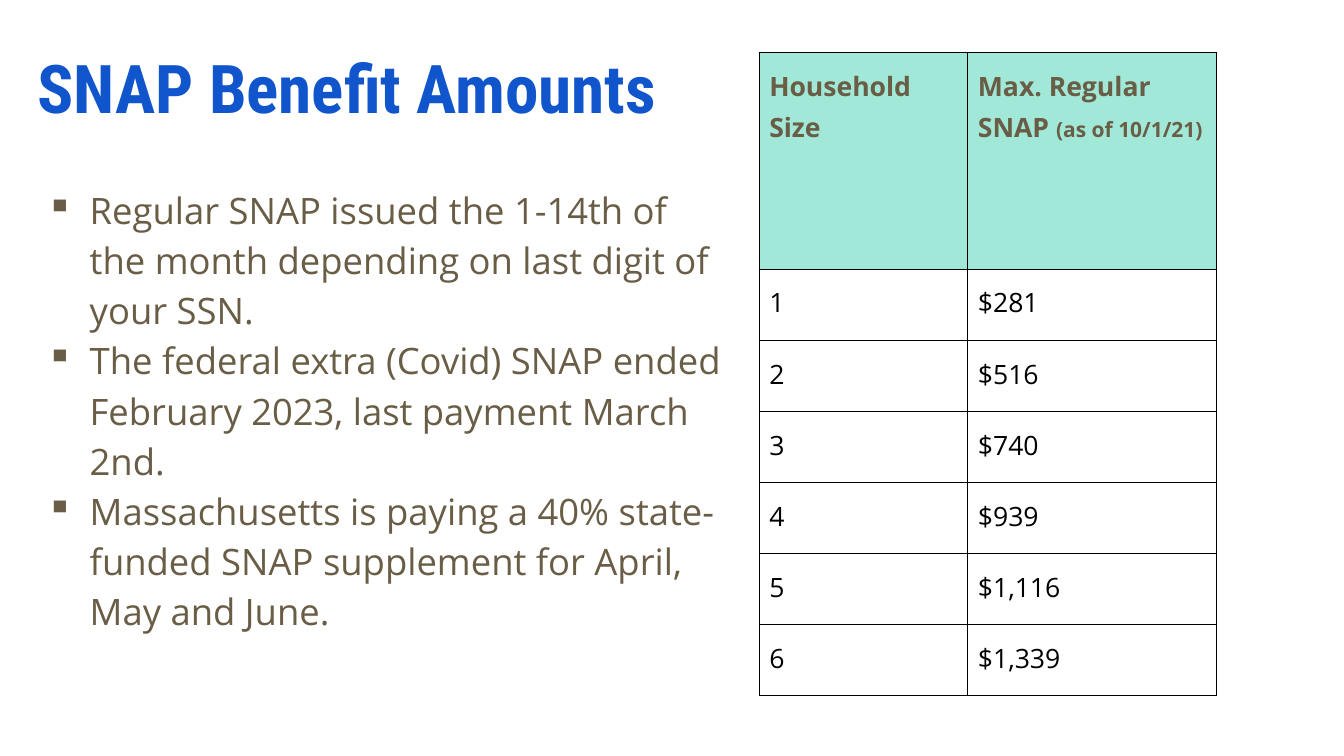
from dataclasses import dataclass

from lxml import etree
from pptx import Presentation
from pptx import util as u
from pptx.dml import color
from pptx.enum import text
from pptx.oxml import ns


@dataclass(frozen=True)
class Theme:
    blue: str = "1155CC"
    brown: str = "695D46"
    mint: str = "A1E8D9"
    black: str = "000000"
    white: str = "FFFFFF"
    head: str = "Roboto Condensed"
    main: str = "Open Sans"
    title: int = 48
    body: int = 26
    cell: int = 19
    note: int = 15


LOOK = Theme()
POINTS = [
    "Regular SNAP issued the 1-14th of the month depending on last digit of your SSN.",
    "The federal extra (Covid) SNAP ended February 2023, last payment March 2nd.",
    "Massachusetts is paying a 40% state-funded SNAP supplement for April, May and June.",
]
HEADS = [
    [("Household Size", LOOK.cell)],
    [("Max. Regular SNAP ", LOOK.cell), ("(as of 10/1/21)", LOOK.note)],
]
SUMS = ["$281", "$516", "$740", "$939", "$1,116", "$1,339"]


def assign(item, **vals):
    for name, val in vals.items():
        setattr(item, name, val)


def add_run(para, words, size, tint, face=LOOK.main, bold=False):
    run = para.add_run()
    run.text = words
    assign(run.font, size=u.Pt(size), name=face, bold=bold)
    run.font.color.rgb = color.RGBColor.from_string(tint)


def add_node(root, tag, **vals):
    return etree.SubElement(root, ns.qn(tag), vals)


def place(item, box):
    assign(item, **dict(zip(("left", "top", "width", "height"), map(u.Inches, box))))


def inset(item, wide, high):
    assign(item, margin_left=u.Inches(wide), margin_right=u.Inches(wide),
           margin_top=u.Inches(high), margin_bottom=u.Inches(high))


def add_title(slide, box):
    title = slide.shapes.title
    place(title, box)
    frame = title.text_frame
    inset(frame, 0.1, 0.05)
    assign(frame, word_wrap=True, auto_size=text.MSO_AUTO_SIZE.NONE,
           vertical_anchor=text.MSO_ANCHOR.BOTTOM)
    para = frame.paragraphs[0]
    assign(para, alignment=text.PP_ALIGN.LEFT, line_spacing=0.85)
    add_run(para, "SNAP Benefit Amounts", LOOK.title, LOOK.blue, LOOK.head, True)


def add_points(slide, box):
    frame = slide.shapes.add_textbox(*map(u.Inches, box)).text_frame
    inset(frame, 0, 0.05)
    frame.word_wrap = True
    for num, words in enumerate(POINTS):
        para = frame.add_paragraph() if num else frame.paragraphs[0]
        props = para._p.get_or_add_pPr()
        props.set("marL", str(u.Inches(0.5)))
        props.set("indent", str(u.Inches(-0.43)))
        add_node(add_node(props, "a:buClr"), "a:srgbClr", val=LOOK.brown)
        add_node(props, "a:buChar", char="▪")
        para.line_spacing = 1.15
        add_run(para, words, LOOK.body, LOOK.brown)


def fill_cell(cell, runs, tint, back, bold):
    inset(cell, 0.1, 0.1)
    props = cell._tc.get_or_add_tcPr()
    for side in ("a:lnL", "a:lnR", "a:lnT", "a:lnB"):
        line = add_node(props, side, w=str(u.Pt(0.75)))
        add_node(add_node(line, "a:solidFill"), "a:srgbClr", val=LOOK.black)
    cell.fill.solid()
    cell.fill.fore_color.rgb = color.RGBColor.from_string(back)
    para = cell.text_frame.paragraphs[0]
    para.line_spacing = 1.15
    for words, size in runs:
        add_run(para, words, size, tint, bold=bold)


def add_sums(slide, box):
    left, top, width, height = box
    first, top_row = 2.07, 2.15
    rows = [HEADS] + [[[(str(size), LOOK.cell)], [(cash, LOOK.cell)]]
                      for size, cash in enumerate(SUMS, 1)]
    table = slide.shapes.add_table(len(rows), 2, *map(u.Inches, box)).table
    assign(table, first_row=False, horz_banding=False)
    for col, wide in zip(table.columns, (first, width - first)):
        col.width = u.Inches(wide)
    for num, row in enumerate(rows):
        high = (height - top_row) / len(SUMS) if num else top_row
        table.rows[num].height = u.Inches(high)
        style = (LOOK.black, LOOK.white, False) if num else (LOOK.brown, LOOK.mint, True)
        for col, runs in enumerate(row):
            fill_cell(table.cell(num, col), runs, *style)


def main():
    deck = Presentation()
    assign(deck, slide_width=u.Inches(13.33), slide_height=u.Inches(7.5))
    slide = deck.slides.add_slide(deck.slide_layouts[5])
    add_title(slide, (0.27, 0.39, 7.74, 0.92))
    add_points(slide, (0.39, 1.75, 6.8, 5.15))
    add_sums(slide, (7.53, 0.52, 4.54, 6.38))
    deck.save("out.pptx")


if __name__ == "__main__":
    main()
